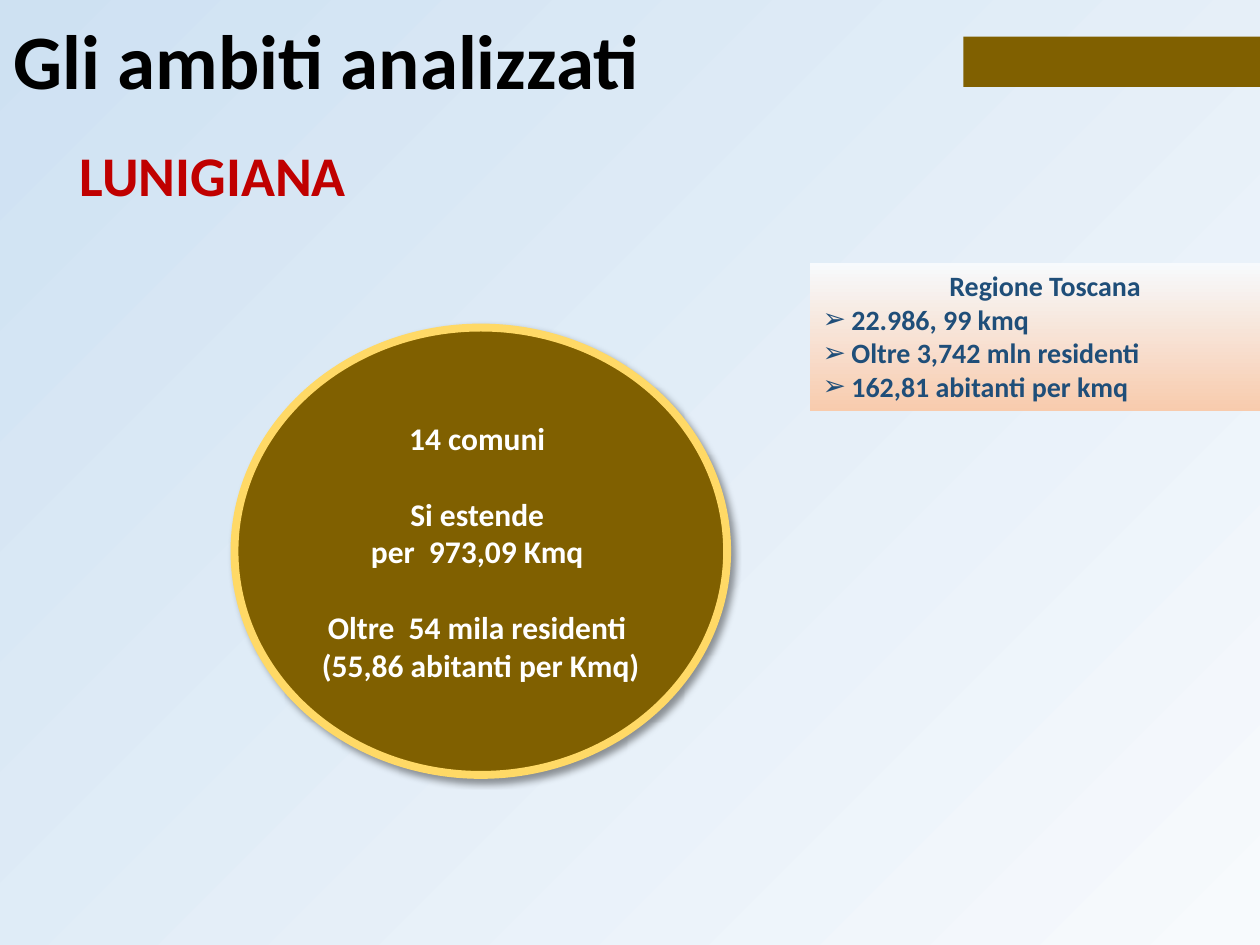
"""Build the Lunigiana slide comparing the area with Regione Toscana."""
from dataclasses import dataclass
from typing import Optional

from lxml.etree import SubElement
from pptx import Presentation
from pptx.dml.color import RGBColor
from pptx.enum.shapes import MSO_SHAPE as Kind
from pptx.enum.text import MSO_ANCHOR as Anchor, PP_ALIGN as Align
from pptx.oxml.ns import qn
from pptx.util import Pt

BROWN = RGBColor(0x80, 0x60, 0x00)
GOLD = RGBColor(0xFF, 0xD9, 0x66)
BLACK = RGBColor(0x00, 0x00, 0x00)
WHITE = RGBColor(0xFF, 0xFF, 0xFF)
RED = RGBColor(0xC0, 0x00, 0x00)
NAVY = RGBColor(0x1F, 0x4E, 0x79)
PALE = RGBColor(0xF7, 0xFA, 0xFD)
SKY = RGBColor(0xCE, 0xE1, 0xF2)
PEACH = RGBColor(0xF8, 0xCB, 0xAD)


@dataclass
class Line:
    text: str
    align: Align = Align.CENTER
    before: float = 0
    after: float = 0
    space: float = 1.0
    bullet: str = ""


@dataclass
class Block:
    box: tuple[float, float, float, float]
    lines: tuple[Line, ...] = ()
    size: float = 18
    color: RGBColor = BLACK
    kind: Optional[Kind] = None
    anchor: Anchor = Anchor.TOP
    inset: tuple[float, float] = (7.2, 3.6)


def blend(fill, start: RGBColor, end: RGBColor, angle: float) -> None:
    """Set a two-colour linear gradient."""
    fill.gradient()
    fill.gradient_angle = angle
    for stop, color in zip(fill.gradient_stops, (start, end)):
        stop.color.rgb = color


def mark(para, sign: str) -> None:
    """Give a paragraph a hanging bullet."""
    props = para._p.get_or_add_pPr()
    hang = Pt(16.5)
    props.set("marL", str(hang))
    props.set("indent", str(-hang))
    SubElement(props, qn("a:buFont"), typeface="Arial")
    SubElement(props, qn("a:buChar"), char=sign)


def shade(shape) -> None:
    """Add a soft shadow falling to the lower right."""
    glow = shape._element.spPr.find(qn("a:effectLst"))
    cast = SubElement(glow, qn("a:outerShdw"), blurRad=str(Pt(4)), dist=str(Pt(3)),
                      dir="2700000", algn="tl", rotWithShape="0")
    tone = SubElement(cast, qn("a:srgbClr"), val="000000")
    SubElement(tone, qn("a:alpha"), val="40000")


def write(frame, block: Block) -> None:
    """Fill a text frame with the lines of a block."""
    frame.word_wrap = True
    frame.vertical_anchor = block.anchor
    side, top = block.inset
    frame.margin_left = frame.margin_right = Pt(side)
    frame.margin_top = frame.margin_bottom = Pt(top)
    frame.text = "\n".join(line.text for line in block.lines)
    for para, line in zip(frame.paragraphs, block.lines):
        para.alignment = line.align
        para.line_spacing = line.space
        para.space_before = Pt(line.before)
        para.space_after = Pt(line.after)
        if line.bullet:
            mark(para, line.bullet)
        for run in para.runs:
            font = run.font
            font.name, font.size, font.bold = "Calibri", Pt(block.size), True
            font.color.rgb = block.color


def draw(slide, block: Block):
    """Draw a block as a text box or a preset shape."""
    box = [Pt(side) for side in block.box]
    if block.kind is None:
        shape = slide.shapes.add_textbox(*box)
    else:
        shape = slide.shapes.add_shape(block.kind, *box)
        shape.shadow.inherit = False
        shape.fill.solid()
        shape.fill.fore_color.rgb = BROWN
        shape.line.fill.background()
    if block.lines:
        write(shape.text_frame, block)
    return shape


AREA = Block((134, 187.2, 281.5, 255.6), (
    Line("14 comuni "),
    Line("Si estende ", before=21.6),
    Line("per  973,09 Kmq "),
    Line("Oltre  54 mila residenti ", before=21.6),
    Line("(55,86 abitanti per Kmq)"),
), 18, WHITE, Kind.OVAL, Anchor.MIDDLE, (5, 2.9))
BAR = Block((550.5, 20.9, 169.5, 28.8), kind=Kind.RECTANGLE)
TITLE = Block((0.7, 5.8, 509.8, 62.6),
              (Line("Gli ambiti analizzati", Align.LEFT, space=0.9),),
              44, BLACK, anchor=Anchor.MIDDLE)
REGION = Block((463, 150, 268.5, 85), (
    Line("Regione Toscana"),
    *(Line(fact, Align.LEFT, bullet="➢") for fact in (
        "22.986, 99 kmq", "Oltre 3,742 mln residenti", "162,81 abitanti per kmq")),
), 16, NAVY, Kind.RECTANGLE)
PLACE = Block((0.7, 77, 242, 46), (Line("LUNIGIANA", after=4.5),), 32, RED)


def main() -> None:
    """Build and save the slide."""
    deck = Presentation()
    deck.slide_width, deck.slide_height = Pt(720), Pt(540)
    slide = deck.slides.add_slide(deck.slide_layouts[6])
    blend(slide.background.fill, PALE, SKY, 135)
    area = draw(slide, AREA)
    area.line.color.rgb = GOLD
    area.line.width = Pt(4.5)
    shade(area)
    draw(slide, BAR)
    draw(slide, TITLE)
    blend(draw(slide, REGION).fill, PALE, PEACH, 270)
    draw(slide, PLACE)
    deck.save("out.pptx")


if __name__ == "__main__":
    main()
